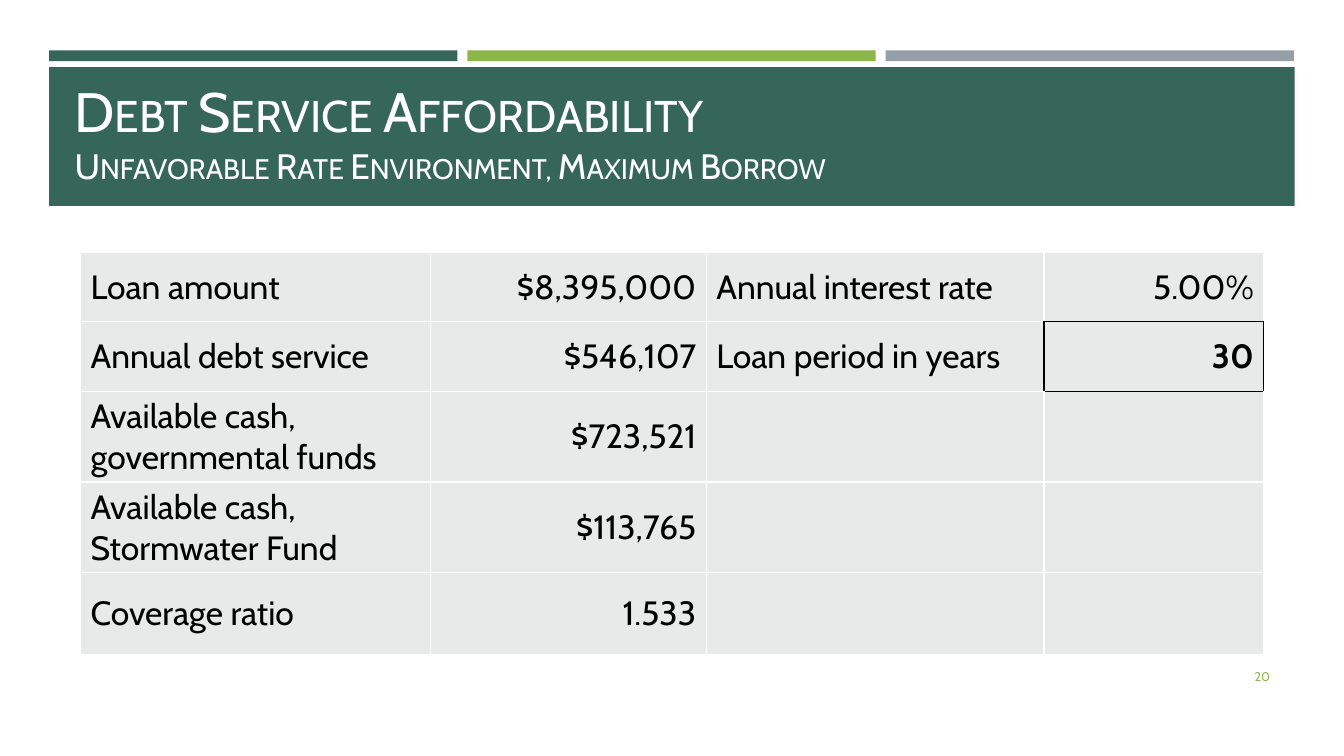
from pptx import Presentation
from pptx.dml.color import RGBColor
from pptx.enum.shapes import MSO_SHAPE
from pptx.enum.text import MSO_ANCHOR as Anchor, PP_ALIGN as Align
from pptx.oxml import parse_xml
from pptx.oxml.ns import nsdecls
from pptx.util import Cm, Pt

GREEN = RGBColor(0x36, 0x66, 0x58)
LIME = RGBColor(0x8C, 0xB6, 0x4A)
GREY = RGBColor(0x96, 0x9F, 0xA7)
PALE = RGBColor(0xE8, 0xEA, 0xEA)
WHITE = RGBColor(0xFF, 0xFF, 0xFF)
BLACK = RGBColor(0, 0, 0)
FONT = "Cabin"


def add_bar(left, top, width, height, color):
    bar = page.shapes.add_shape(MSO_SHAPE.RECTANGLE, Cm(left), Cm(top), Cm(width), Cm(height))
    bar.shadow.inherit = False
    bar.fill.solid()
    bar.fill.fore_color.rgb = color
    bar.line.fill.background()


def style_font(font, size, color):
    font.name = FONT
    font.size = Pt(size)
    font.color.rgb = color


deck = Presentation()
deck.slide_width, deck.slide_height = Cm(33.87), Cm(19.05)
page = deck.slides.add_slide(deck.slide_layouts[6])

# Three accent bars above the title band
for index, color in enumerate((GREEN, LIME, GREY)):
    add_bar(1.24 + index * 10.54, 1.27, 10.29, 0.27, color)
add_bar(1.24, 1.69, 31.39, 3.5, GREEN)

# Title in small capitals
title = page.shapes.add_textbox(Cm(1.63), Cm(2.08), Cm(30.63), Cm(2.74)).text_frame
title.word_wrap = True
title.vertical_anchor = Anchor.BOTTOM
para = title.paragraphs[0]
style_font(para.font, 39.6, WHITE)
for text, size in (("Debt Service Affordability", 39.6),
                   ("Unfavorable Rate Environment, Maximum Borrow", 25.2)):
    if para.runs:
        para.add_line_break()
    span = para.add_run()
    span.text = text
    style_font(span.font, size, WHITE)
    span.font._element.set("cap", "small")

# Loan table
ROWS = [
    ("Loan amount", "$8,395,000", "Annual interest rate", "5.00%"),
    ("Annual debt service", "$546,107", "Loan period in years", "30"),
    ("Available cash, governmental funds", "$723,521", "", ""),
    ("Available cash, Stormwater Fund", "$113,765", "", ""),
    ("Coverage ratio", "1.533", "", ""),
]
COLUMN_WIDTHS = (8.81, 6.96, 8.51, 5.54)
ROW_HEIGHTS = (1.75, 1.75, 2.18, 2.18, 2.06)
BOXED = (1, 3)
# Edges that touch the boxed cell, by cell
BLACK_EDGES = {BOXED: ("L", "R", "T", "B"), (0, 3): ("B",), (1, 2): ("R",), (2, 3): ("T",)}

table = page.shapes.add_table(len(ROWS), len(COLUMN_WIDTHS), Cm(2.03), Cm(6.36),
                              Cm(sum(COLUMN_WIDTHS)), Cm(sum(ROW_HEIGHTS))).table
for column, width in zip(table.columns, COLUMN_WIDTHS):
    column.width = Cm(width)
for row, height in zip(table.rows, ROW_HEIGHTS):
    row.height = Cm(height)

for row_index, texts in enumerate(ROWS):
    for column_index, text in enumerate(texts):
        place = (row_index, column_index)
        cell = table.cell(*place)
        cell.vertical_anchor = Anchor.MIDDLE
        cell.fill.solid()
        cell.fill.fore_color.rgb = PALE
        para = cell.text_frame.paragraphs[0]
        para.text = text
        para.alignment = Align.RIGHT if column_index % 2 else Align.LEFT
        style_font(para.font, 24, BLACK)
        para.font.bold = place == BOXED
        # Borders come before the fill in the cell properties
        for position, edge in enumerate(("L", "R", "T", "B")):
            color = BLACK if edge in BLACK_EDGES.get(place, ()) else WHITE
            border = parse_xml(
                f'<a:ln{edge} {nsdecls("a")} w="{Pt(1)}"><a:solidFill>'
                f'<a:srgbClr val="{color}"/></a:solidFill></a:ln{edge}>')
            cell._tc.get_or_add_tcPr().insert(position, border)

# Page number
number = page.shapes.add_textbox(Cm(29.34), Cm(16.54), Cm(2.92), Cm(1.02)).text_frame
number.word_wrap = True
number.vertical_anchor = Anchor.MIDDLE
para = number.paragraphs[0]
para.text = "20"
para.alignment = Align.RIGHT
style_font(para.font, 9, LIME)

deck.save("out.pptx")
